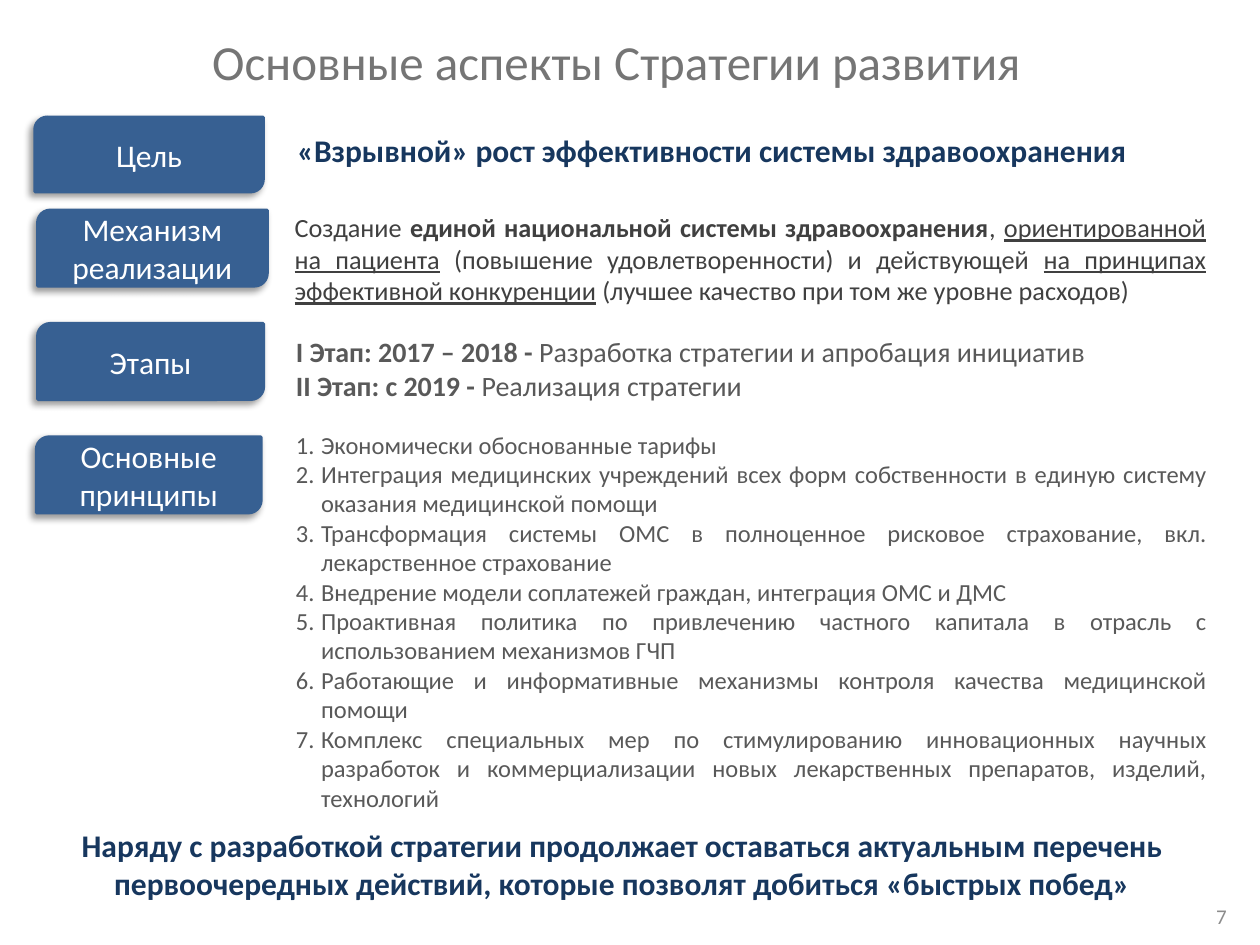
import pptx
import pptx.util
import pptx.dml.color
import pptx.enum.shapes
import pptx.enum.text
import pptx.oxml
import pptx.oxml.ns

Pt = pptx.util.Pt
ALIGN = pptx.enum.text.PP_ALIGN
ANCHOR = pptx.enum.text.MSO_ANCHOR

FONT = "Calibri"
BLUE, NAVY, WHITE = "376092", "17375E", "FFFFFF"
GREY, DARK = "595959", "404040"

# Label text and box: left, top, width, height
LABELS = [
    ("Цель", (20, 67, 130.3, 42.5)),
    ("Механизм реализации", (21.6, 120.2, 131, 43.2)),
    ("Этапы", (21.6, 185, 128.9, 43.2)),
    ("Основные принципы", (20.9, 249.8, 128.2, 43.2)),
]

# Paragraphs are lists of runs: text and style letters (b = bold, u = underline)
GOAL = [[("«Взрывной» рост эффективности системы здравоохранения", "b")]]
MECHANISM = [[
    ("Создание ", ""),
    ("единой национальной системы здравоохранения", "b"),
    (", ", ""),
    ("ориентированной на пациента", "u"),
    (" (повышение удовлетворенности) и действующей ", ""),
    ("на принципах эффективной конкуренции", "u"),
    (" (лучшее качество при том же уровне расходов)", ""),
]]
STAGES = [
    [("I Этап: 2017 – 2018 - ", "b"),
     ("Разработка стратегии и апробация инициатив", "")],
    [("II Этап: с 2019 - ", "b"), ("Реализация стратегии", "")],
]
PRINCIPLES = [[(text, "")] for text in (
    "Экономически обоснованные тарифы",
    "Интеграция медицинских учреждений всех форм собственности в единую "
    "систему оказания медицинской помощи",
    "Трансформация системы ОМС в полноценное рисковое страхование, вкл. "
    "лекарственное страхование",
    "Внедрение модели соплатежей граждан, интеграция ОМС и ДМС",
    "Проактивная политика по привлечению частного капитала в отрасль с "
    "использованием механизмов ГЧП",
    "Работающие и информативные механизмы контроля качества медицинской "
    "помощи",
    "Комплекс специальных мер по стимулированию инновационных научных "
    "разработок и коммерциализации новых лекарственных препаратов, "
    "изделий, технологий",
)]
CONCLUSION = [[(
    "Наряду с разработкой стратегии продолжает оставаться актуальным "
    "перечень первоочередных действий, которые позволят добиться "
    "«быстрых побед»", "b")]]


def rgb(value):
    return pptx.dml.color.RGBColor.from_string(value)


def write(sp, paragraphs, size, color, align, anchor=ANCHOR.MIDDLE):
    """Fill a shape with styled paragraphs."""
    tf = sp.text_frame
    tf.word_wrap = True
    tf.auto_size = pptx.enum.text.MSO_AUTO_SIZE.NONE
    tf.vertical_anchor = anchor
    for i, runs in enumerate(paragraphs):
        p = tf.add_paragraph() if i else tf.paragraphs[0]
        p.alignment = align
        for text, style in runs:
            r = p.add_run()
            r.text = text
            r.font.name = FONT
            r.font.size = Pt(size)
            r.font.bold = "b" in style
            r.font.underline = "u" in style
            r.font.color.rgb = rgb(color)
    return tf


def add_title(s, text):
    sp = s.shapes.title
    sp.left, sp.top, sp.width, sp.height = map(Pt, (-0.7, 3.6, 705.6, 62.6))
    write(sp, [[(text, "")]], 28, "757575", ALIGN.CENTER)


def add_shadow(sp):
    sp.shadow.inherit = False
    effects = sp.element.spPr.find(pptx.oxml.ns.qn("a:effectLst"))
    effects.append(pptx.oxml.parse_xml(
        f'<a:outerShdw {pptx.oxml.ns.nsdecls("a")} blurRad="{Pt(4)}" '
        f'dist="{Pt(3)}" dir="{135 * 60000}" algn="tr" rotWithShape="0">'
        '<a:srgbClr val="000000"><a:alpha val="40000"/></a:srgbClr>'
        '</a:outerShdw>'))


def add_label(s, text, box):
    kind = pptx.enum.shapes.MSO_SHAPE.ROUND_2_DIAG_RECTANGLE
    sp = s.shapes.add_shape(kind, *map(Pt, box))
    sp.fill.solid()
    sp.fill.fore_color.rgb = rgb(BLUE)
    sp.line.color.rgb = rgb(BLUE)
    sp.line.width = Pt(2)
    add_shadow(sp)
    write(sp, [[(text, "")]], 18, WHITE, ALIGN.CENTER)


def add_text(s, paragraphs, box, size, color, align=ALIGN.JUSTIFY,
             anchor=ANCHOR.MIDDLE):
    sp = s.shapes.add_textbox(*map(Pt, box))
    return write(sp, paragraphs, size, color, align, anchor)


def number_paragraphs(tf, indent):
    for p in tf.paragraphs:
        pPr = p._p.get_or_add_pPr()
        pPr.set("marL", str(Pt(indent)))
        pPr.set("indent", str(-Pt(indent)))
        pPr.append(pptx.oxml.parse_xml(
            f'<a:buAutoNum {pptx.oxml.ns.nsdecls("a")} type="arabicPeriod"/>'))


def main():
    prs = pptx.Presentation()
    prs.slide_width, prs.slide_height = Pt(720), Pt(540)
    s = prs.slides.add_slide(prs.slide_layouts[5])
    add_title(s, "Основные аспекты Стратегии развития")

    # Left column of labels
    for text, box in LABELS:
        add_label(s, text, box)

    # Right column of explanations
    add_text(s, GOAL, (162.7, 63.4, 535, 43.9), 18, NAVY)
    add_text(s, MECHANISM, (161.3, 116.6, 535, 62.6), 15, DARK)
    add_text(s, STAGES, (162, 185, 535.7, 51.1), 16, GREY)
    principles = add_text(s, PRINCIPLES, (162, 241.9, 535, 226.8), 14, GREY,
                          anchor=ANCHOR.TOP)
    number_paragraphs(principles, 14.4)

    # Conclusion and slide number
    conclusion = add_text(s, CONCLUSION, (11.5, 468.7, 688.3, 51.1), 18, NAVY,
                          ALIGN.CENTER, ANCHOR.TOP)
    conclusion.paragraphs[0].space_before = Pt(12)
    add_text(s, [[("7", "")]], (679.7, 509, 36.7, 28.8), 12, "8C8C8C",
             ALIGN.CENTER)

    prs.save("out.pptx")


if __name__ == "__main__":
    main()
